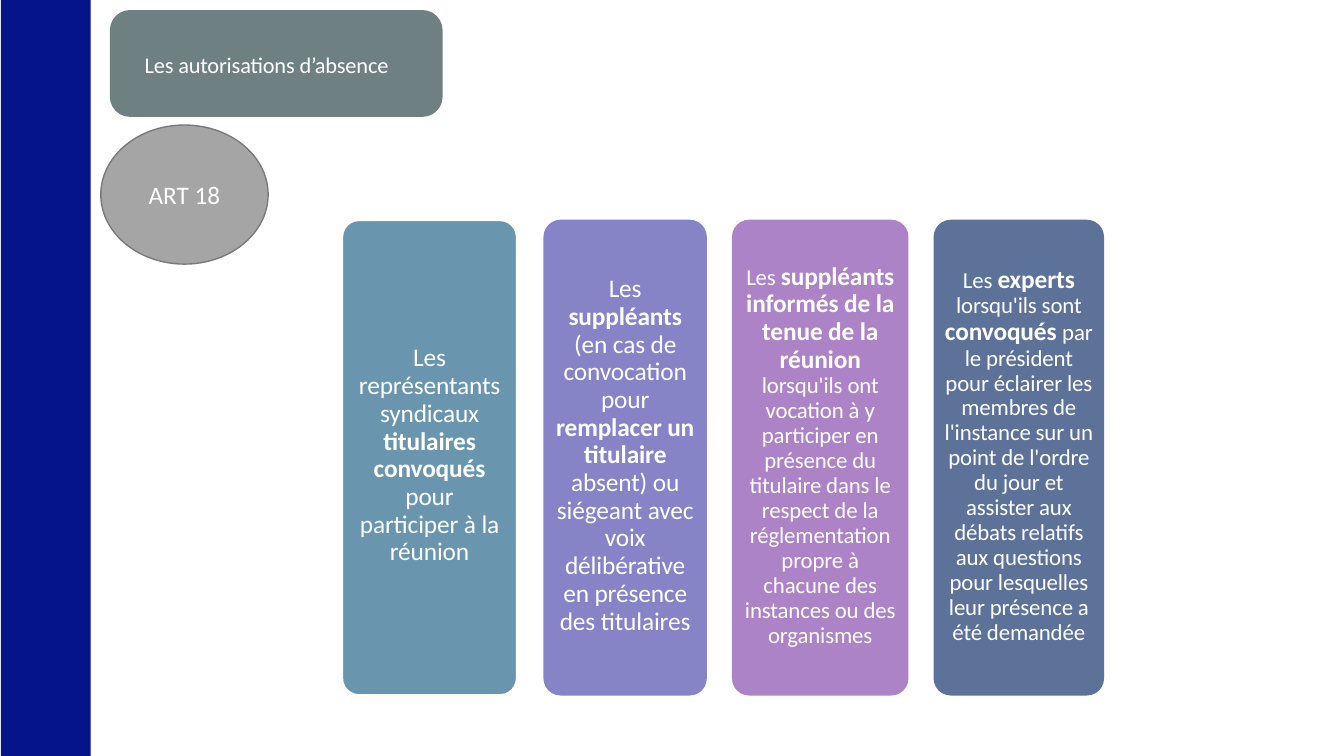
"""Slide on leave authorisations under article 18."""
from pptx import Presentation
from pptx.dml.color import RGBColor
from pptx.enum.shapes import MSO_SHAPE
from pptx.enum.text import MSO_ANCHOR, PP_ALIGN
from pptx.util import Inches, Pt

RECT, ROUND, OVAL = MSO_SHAPE.RECTANGLE, MSO_SHAPE.ROUNDED_RECTANGLE, MSO_SHAPE.OVAL
MIDDLE, CENTER = MSO_ANCHOR.MIDDLE, PP_ALIGN.CENTER

THEME = {
    "font": "Calibri", "white": "FFFFFF",
    "bar": "06148C", "title": "6F8082", "badge": "A5A5A5", "edge": "7A7A7A",
    "cards": ["6996AE", "8683C7", "AC83C6", "5D7299"],
    "head": 16, "label": 18, "large": 18.1, "small": 16.3,
}

TITLE = "Les autorisations d’absence"
ARTICLE = "ART 18"
CARDS = [
    {"left": 3.39, "width": 1.74, "size": "large", "pad": 0.09, "edge": "white",
     "text": "Les représentants syndicaux *titulaires convoqués *pour participer à la réunion"},
    {"left": 5.39, "width": 1.62, "size": "large", "pad": 0.06, "edge": None,
     "text": "Les *suppléants *(en cas de convocation pour *remplacer un titulaire *"
             "absent) ou siégeant avec voix délibérative en présence des titulaires"},
    {"left": 7.26, "width": 1.75, "size": "small", "pad": 0.06, "edge": None,
     "text": "Les *suppléants informés de la tenue de la réunion *lorsqu'ils ont "
             "vocation à y participer en présence du titulaire dans le respect de la "
             "réglementation propre à chacune des instances ou des organismes"},
    {"left": 9.26, "width": 1.69, "size": "small", "pad": 0.06, "edge": None,
     "text": "Les *experts *lorsqu'ils sont *convoqués *par le président pour éclairer "
             "les membres de l'instance sur un point de l'ordre du jour et assister aux "
             "débats relatifs aux questions pour lesquelles leur présence a été demandée"},
]
TOP, HEIGHT, RADIUS = 2.18, 4.72, 0.17


def color(name):
    return RGBColor.from_string(THEME.get(name, name))


def block(kind, left, top, width, height, fill, edge=None, weight=1, radius=None):
    shape = slide.shapes.add_shape(
        kind, Inches(left), Inches(top), Inches(width), Inches(height))
    shape.shadow.inherit = False
    shape.fill.solid()
    shape.fill.fore_color.rgb = color(fill)
    if edge:
        shape.line.color.rgb = color(edge)
        shape.line.width = Pt(weight)
    else:
        shape.line.fill.background()
    if radius:
        shape.adjustments[0] = radius / min(width, height)
    return shape


def write(shape, text, size, strong=None, pads=(0.1, 0.05, 0.1, 0.05), lead=1.0, track=0):
    frame = shape.text_frame
    frame.word_wrap = True
    frame.vertical_anchor = MIDDLE
    (frame.margin_left, frame.margin_top,
     frame.margin_right, frame.margin_bottom) = map(Inches, pads)
    para = frame.paragraphs[0]
    para.alignment = CENTER
    para.line_spacing = lead
    for i, part in enumerate(text.split("*")):
        bold = i % 2 == 1
        run = para.add_run()
        run.text = part
        run.font.name = THEME["font"]
        run.font.size = Pt(THEME[strong if bold else size])
        run.font.bold = bold
        run.font.color.rgb = color("white")
        run.font._element.set("spc", str(track))


deck = Presentation()
deck.slide_width, deck.slide_height = Inches(13.33), Inches(7.5)
slide = deck.slides.add_slide(deck.slide_layouts[6])

block(RECT, 0.01, 0, 0.89, 7.5, "bar")
for card, fill in zip(CARDS, THEME["cards"]):
    panel = block(ROUND, card["left"], TOP, card["width"], HEIGHT, fill,
                  edge=card["edge"], weight=2, radius=RADIUS)
    pad = card["pad"]
    write(panel, card["text"], card["size"], strong="large",
          pads=(pad, 0, pad, 0.04), lead=0.91, track=-10)

badge = block(OVAL, 1, 1.24, 1.66, 1.38, "badge", edge="edge")
write(badge, ARTICLE, "label")
title = block(ROUND, 1.09, 0.1, 3.3, 1.06, "title", radius=0.2)
write(title, TITLE, "head", pads=(0, 0.03, 0.19, 0), track=-10)

deck.save("out.pptx")
